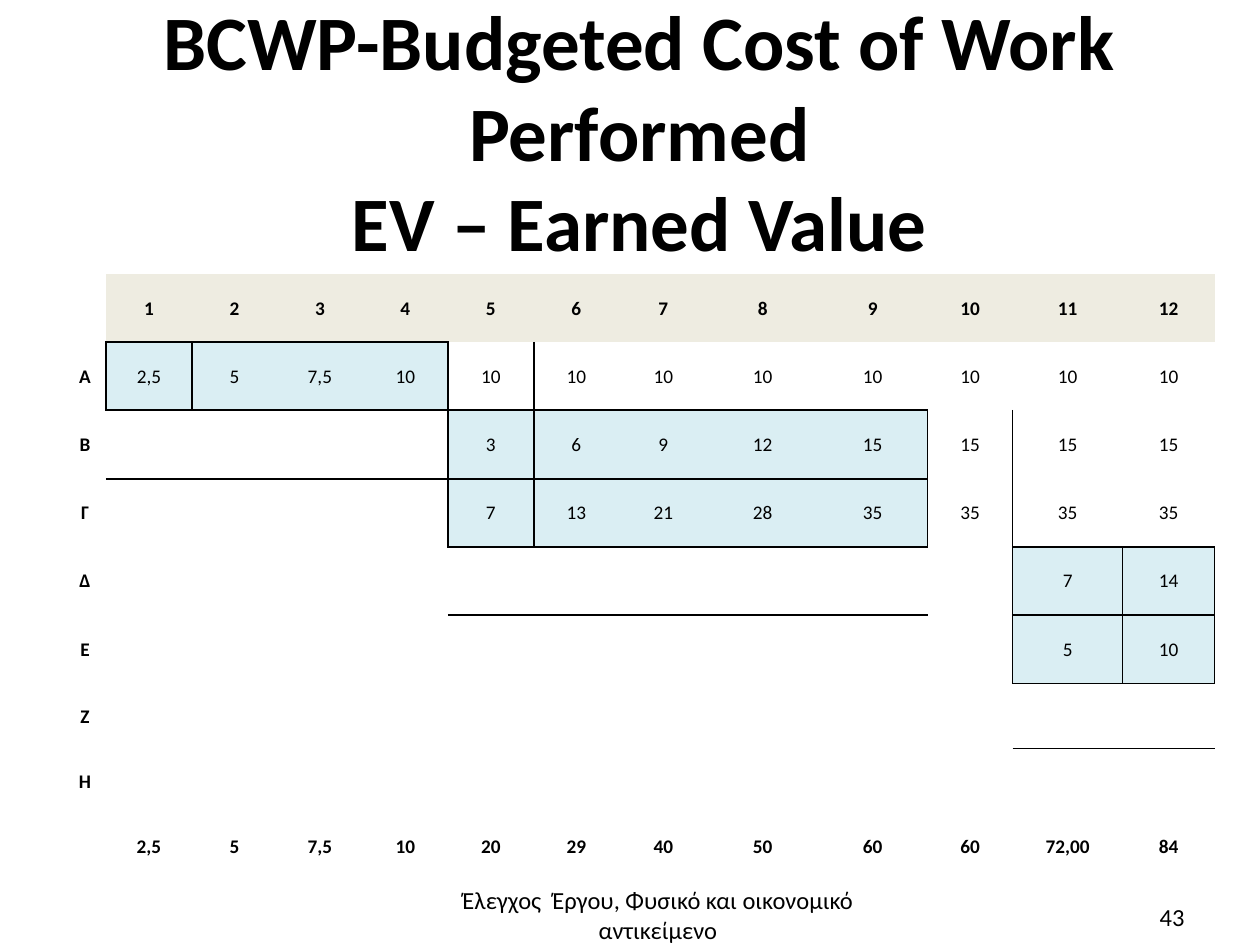
import pptx
import pptx.util
import pptx.dml.color
import pptx.enum.text
import pptx.oxml.ns
import lxml.etree
from dataclasses import dataclass


@dataclass
class Theme:
    font: str = "Calibri"
    ink: str = "000000"
    head: str = "EEECE1"
    bar: str = "DAEEF3"
    title: int = 44
    cell: int = 11
    foot: int = 14


theme = Theme()
scale = 914400 / 126
align = pptx.enum.text.PP_ALIGN
anchor = pptx.enum.text.MSO_ANCHOR
qn = pptx.oxml.ns.qn


def px(n):
    return pptx.util.Emu(round(n * scale))


def style(para, size, bold=False, side=align.CENTER):
    para.alignment = side
    for run in para.runs:
        run.font.name = theme.font
        run.font.size = pptx.util.Pt(size)
        run.font.bold = bold
        run.font.color.rgb = pptx.dml.color.RGBColor.from_string(theme.ink)


deck = pptx.Presentation()
deck.slide_width = px(1260)
deck.slide_height = px(945)
slide = deck.slides.add_slide(deck.slide_layouts[5])

title = slide.shapes.title
title.left, title.top, title.width, title.height = px(64), px(11), px(1151), px(243)
frame = title.text_frame
frame.word_wrap = True
frame.auto_size = pptx.enum.text.MSO_AUTO_SIZE.NONE
frame.vertical_anchor = anchor.MIDDLE
frame.margin_left = frame.margin_right = frame.margin_bottom = 0
frame.margin_top = px(3)
para = frame.paragraphs[0]
para.text = "BCWP-Budgeted Cost of Work Performed\vEV – Earned Value"
para.line_spacing = 0.98
style(para, theme.title, True)

rows = [
    ["", *[str(n) for n in range(1, 13)]],
    ["Α", "2,5", "5", "7,5"] + ["10"] * 9,
    ["Β"] + [""] * 4 + ["3", "6", "9", "12"] + ["15"] * 4,
    ["Γ"] + [""] * 4 + ["7", "13", "21", "28"] + ["35"] * 4,
    ["Δ"] + [""] * 10 + ["7", "14"],
    ["Ε"] + [""] * 10 + ["5", "10"],
    ["Ζ"] + [""] * 12,
    ["Η"] + [""] * 12,
    ["", "2,5", "5", "7,5", "10", "20", "29", "40", "50", "60", "60", "72,00", "84"],
]
spans = {1: (1, 4), 2: (5, 9), 3: (5, 9), 4: (11, 12), 5: (11, 12)}
bars = {(r, c) for r, (a, b) in spans.items() for c in range(a, b + 1)}
wide = [42] + [86, 85] * 3 + [89, 110, 110, 85, 110, 92]
high = [68, 68, 69] * 2 + [65] * 3

holder = slide.shapes.add_table(
    len(rows), len(wide), px(64), px(274), px(sum(wide)), px(sum(high)))
table = holder.table
table.first_row = False
table.horz_banding = False
plain = holder.element.find(".//" + qn("a:tableStyleId"))
plain.text = "{2D5ABB26-0587-4C30-8999-92F81FD0307C}"
for c, n in enumerate(wide):
    table.columns[c].width = px(n)
for r, n in enumerate(high):
    table.rows[r].height = px(n)

for r, row in enumerate(rows):
    for c, word in enumerate(row):
        cell = table.cell(r, c)
        cell.margin_left = cell.margin_right = cell.margin_top = px(1)
        cell.margin_bottom = 0
        cell.vertical_anchor = anchor.MIDDLE
        if word:
            cell.text_frame.text = word
            style(cell.text_frame.paragraphs[0], theme.cell, c == 0 or r in (0, 8))

        here = (r, c) in bars
        edges = {
            "L": here != ((r, c - 1) in bars),
            "R": here != ((r, c + 1) in bars),
            "T": here or (r - 1, c) in bars,
            "B": here or (r + 1, c) in bars,
        }
        props = cell._tc.get_or_add_tcPr()
        for side, drawn in edges.items():
            if drawn:
                line = lxml.etree.SubElement(props, qn("a:ln" + side), w="12700")
                fill = lxml.etree.SubElement(line, qn("a:solidFill"))
                lxml.etree.SubElement(fill, qn("a:srgbClr"), val=theme.ink)

        tint = theme.bar if here else theme.head if r == 0 and c else None
        if tint:
            cell.fill.solid()
            cell.fill.fore_color.rgb = pptx.dml.color.RGBColor.from_string(tint)
        else:
            cell.fill.background()

for box, word, side in [
    ((438, 879, 440, 69), "Έλεγχος  Έργου, Φυσικό και οικονομικό αντικείμενο", align.CENTER),
    ((903, 896, 294, 50), "43", align.RIGHT),
]:
    note = slide.shapes.add_textbox(*[px(n) for n in box])
    note.text_frame.word_wrap = True
    note.text_frame.text = word
    style(note.text_frame.paragraphs[0], theme.foot, side=side)

deck.save("out.pptx")
